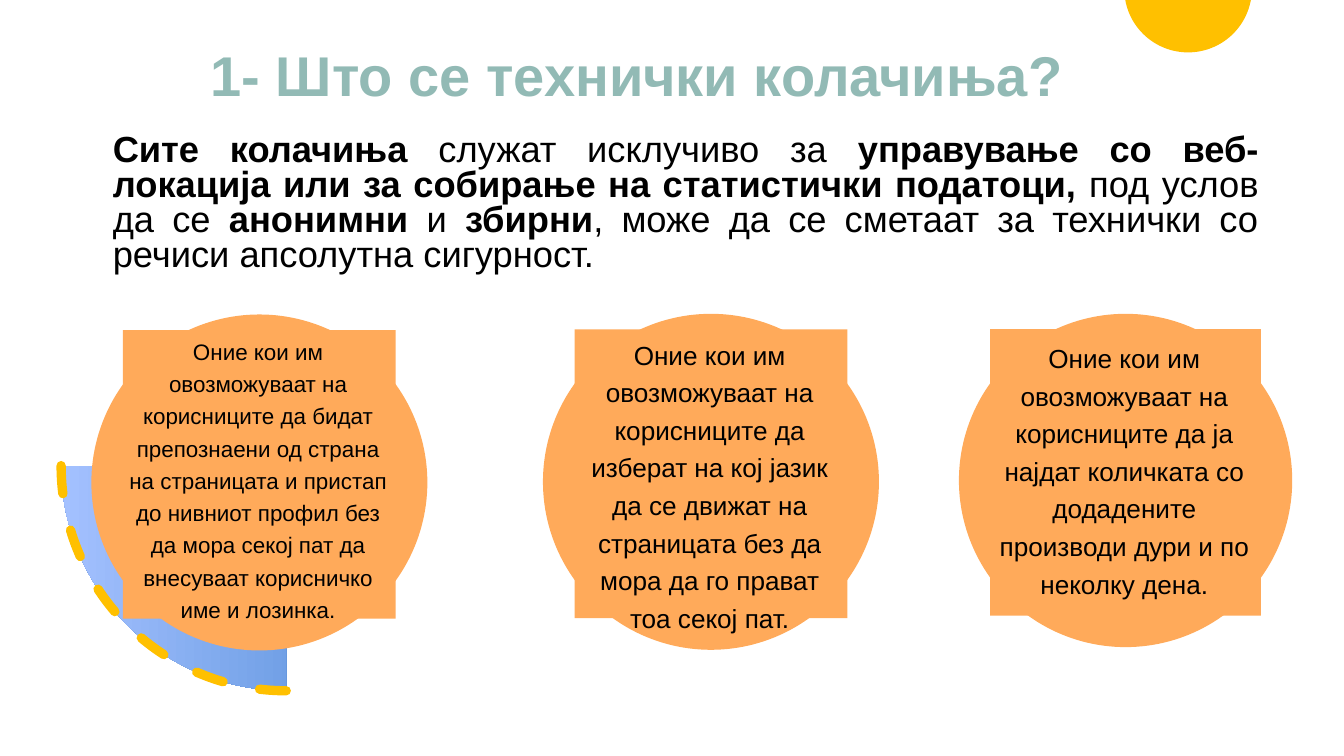
"""Build a slide on technical cookies with three circular examples."""
from math import asin, cos, pi, sin

from pptx import Presentation
from pptx.dml.color import RGBColor
from pptx.enum.dml import MSO_LINE
from pptx.enum.shapes import MSO_SHAPE as Shape
from pptx.enum.text import MSO_ANCHOR as Anchor, PP_ALIGN as Align
from pptx.util import Inches, Pt

TITLE = "1- Што се технички колачиња?"
INTRO = [
    ("Сите колачиња ", True),
    ("служат исклучиво за ", False),
    ("управување со веб-локација или за собирање на статистички податоци, ", True),
    ("под услов да се ", False),
    ("анонимни ", True),
    ("и ", False),
    ("збирни", True),
    (", може да се сметаат за технички со речиси апсолутна сигурност.", False),
]
LEAD = "Оние кои им овозможуваат на корисниците "
CARDS = [
    dict(text="да бидат препознаени од страна на страницата и пристап до нивниот "
              "профил без да мора секој пат да внесуваат корисничко име и лозинка.",
         size=24, center=(3.86, 7.18), diameter=5, top=4.95, height=4.28),
    dict(text="да изберат на кој јазик да се движат на страницата "
              "без да мора да го прават тоа секој пат.",
         size=28, center=(10.58, 7.17), diameter=5, top=4.95, height=4.99),
    dict(text="да ја најдат количката со додадените производи дури и по неколку дена.",
         size=28, center=(16.75, 7.15), diameter=4.96, top=5, height=3.86),
]

FONT = "Arial"
TEAL = RGBColor(0x92, 0xBA, 0xB5)
YELLOW = RGBColor(0xFF, 0xC0, 0x00)
ORANGE = RGBColor(0xFF, 0xAA, 0x5A)
BLACK = RGBColor(0, 0, 0)

SUN_X, SUN_Y, SUN_R, SUN_STEPS = 17.68, -0.17, 0.95, 60
RECT_W, RECT_H, RECT_DY = 0.812, 0.859, -0.12
TEXT_W, TEXT_DX = 3.9, -0.02


def paint(sp, color):
    sp.shadow.inherit = False
    sp.fill.solid()
    sp.fill.fore_color.rgb = color
    sp.line.fill.background()


def add_text(shapes, box, runs, size, color, align, spacing,
             margins=(0.1, 0.05), anchor=Anchor.TOP):
    tf = shapes.add_textbox(*map(Inches, box)).text_frame
    tf.word_wrap = True
    tf.vertical_anchor = anchor
    tf.margin_left = tf.margin_right = Inches(margins[0])
    tf.margin_top = tf.margin_bottom = Inches(margins[1])
    p = tf.paragraphs[0]
    p.alignment, p.line_spacing = align, spacing
    for text, bold in runs:
        r = p.add_run()
        r.text = text
        r.font.name, r.font.size, r.font.bold = FONT, Pt(size), bold
        r.font.color.rgb = color


def add_sun(shapes):
    start = asin(-SUN_Y / SUN_R)
    angles = [start + (pi - 2 * start) * i / SUN_STEPS for i in range(SUN_STEPS + 1)]
    points = [(Inches(SUN_X + SUN_R * cos(a)), Inches(max(0, SUN_Y + SUN_R * sin(a))))
              for a in angles]
    builder = shapes.build_freeform(*points[0])
    builder.add_line_segments(points[1:], close=True)
    paint(builder.convert_to_shape(), YELLOW)


def add_dashed_arc(shapes):
    sp = shapes.add_shape(Shape.ARC, *map(Inches, (0.91, 3.58, 6.7, 6.7)))
    sp.shadow.inherit = False
    sp.rotation = 270
    sp.element.spPr.xfrm.set("flipH", "1")
    sp.line.color.rgb = YELLOW
    sp.line.width = Pt(10)
    sp.line.dash_style = MSO_LINE.DASH
    sp.line._get_or_add_ln().set("cap", "rnd")


def add_card(shapes, card):
    (cx, cy), d = card["center"], card["diameter"]
    group = shapes.add_group_shape()
    for kind, w, h, dy in ((Shape.OVAL, d, d, 0),
                           (Shape.RECTANGLE, d * RECT_W, d * RECT_H, RECT_DY)):
        box = (cx - w / 2, cy + dy - h / 2, w, h)
        paint(group.shapes.add_shape(kind, *map(Inches, box)), ORANGE)
    box = (cx + TEXT_DX - TEXT_W / 2, card["top"], TEXT_W, card["height"])
    add_text(shapes, box, [(LEAD + card["text"], False)], card["size"],
             BLACK, Align.CENTER, 1.2, margins=(0, 0))


def main():
    prs = Presentation()
    prs.slide_width, prs.slide_height = Inches(20), Inches(11.25)
    s = prs.slides.add_slide(prs.slide_layouts[6])
    add_sun(s.shapes)
    add_text(s.shapes, (0.33, 0.6, 18.29, 1.14), [(TITLE, True)], 60, TEAL,
             Align.CENTER, 0.9, anchor=Anchor.MIDDLE)
    add_dashed_arc(s.shapes)
    add_text(s.shapes, (1.58, 1.96, 17.25, 2.24), INTRO, 38.9, BLACK,
             Align.JUSTIFY, 0.8)
    for card in CARDS:
        add_card(s.shapes, card)
    prs.save("out.pptx")


if __name__ == "__main__":
    main()
